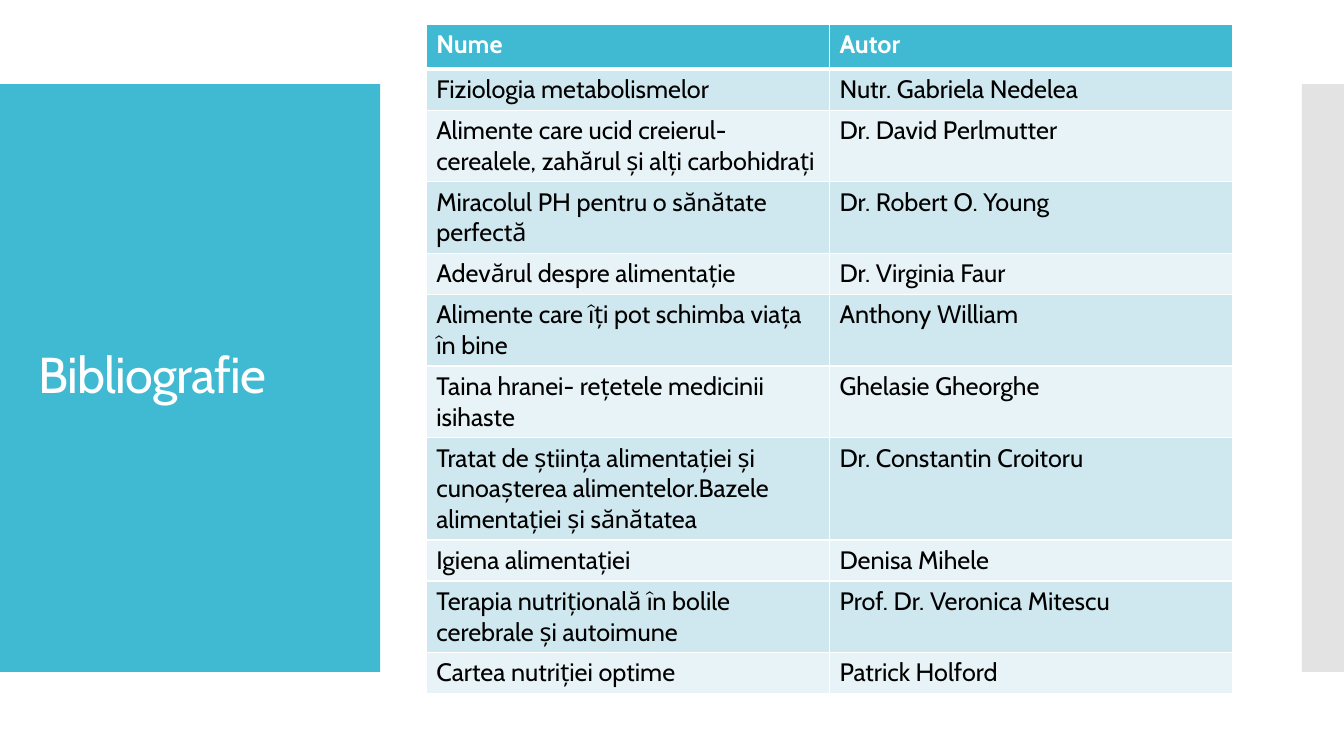
from lxml import etree
from pptx import Presentation
from pptx import util as u
from pptx.dml.color import RGBColor
from pptx.enum import shapes, text
from pptx.oxml import ns

PX = 9525
FONT = "Cabin"
TEAL = RGBColor(0x40, 0xBA, 0xD2)
GRAY = RGBColor(0xC8, 0xC8, 0xC8)
WHITE = RGBColor(0xFF, 0xFF, 0xFF)
BLACK = RGBColor(0x00, 0x00, 0x00)
BANDS = (RGBColor(0xCF, 0xE7, 0xEE), RGBColor(0xE8, 0xF3, 0xF7))

HEADER = ("Nume", "Autor")
BOOKS = [
    ("Fiziologia metabolismelor", "Nutr. Gabriela Nedelea"),
    ("Alimente care ucid creierul-cerealele, zahărul și alți carbohidrați", "Dr. David Perlmutter"),
    ("Miracolul PH pentru o sănătate perfectă", "Dr. Robert O. Young"),
    ("Adevărul despre alimentație", "Dr. Virginia Faur"),
    ("Alimente care îți pot schimba viața în bine", "Anthony William"),
    ("Taina hranei- rețetele medicinii isihaste", "Ghelasie Gheorghe"),
    ("Tratat de știința alimentației și cunoașterea alimentelor.Bazele alimentației și sănătatea",
     "Dr. Constantin Croitoru"),
    ("Igiena alimentației", "Denisa Mihele"),
    ("Terapia nutrițională în bolile cerebrale și autoimune", "Prof. Dr. Veronica Mitescu"),
    ("Cartea nutriției optime", "Patrick Holford"),
]


def px(*lengths):
    return [u.Emu(length * PX) for length in lengths]


def add_run(paragraph, words, size, color, bold=False):
    run = paragraph.add_run()
    run.text = words
    run.font.name = FONT
    run.font.size = u.Pt(size)
    run.font.bold = bold
    run.font.color.rgb = color
    return run


def add_panel(slide, left, top, width, height, color, opacity=100):
    panel = slide.shapes.add_shape(shapes.MSO_SHAPE.RECTANGLE, *px(left, top, width, height))
    panel.shadow.inherit = False
    panel.fill.solid()
    panel.fill.fore_color.rgb = color
    panel.line.fill.background()
    if opacity < 100:
        fill_color = panel.fill._xPr.find(".//" + ns.qn("a:srgbClr"))
        etree.SubElement(fill_color, ns.qn("a:alpha"), val=str(opacity * 1000))


def set_title(slide, words, left, top, width, height):
    title = slide.shapes.title
    title.left, title.top, title.width, title.height = px(left, top, width, height)
    # Bring the title in front of the panels
    title._element.getparent().append(title._element)
    frame = title.text_frame
    frame.word_wrap = True
    frame.auto_size = text.MSO_AUTO_SIZE.NONE
    frame.vertical_anchor = text.MSO_ANCHOR.MIDDLE
    paragraph = frame.paragraphs[0]
    paragraph.alignment = text.PP_ALIGN.LEFT
    paragraph.line_spacing = 0.9
    run = add_run(paragraph, words, 36, WHITE)
    run.font._element.set("spc", "-60")


def set_borders(cell, top, bottom):
    """Draw white borders; top and bottom are widths in points."""
    properties = cell._tc.get_or_add_tcPr()
    for side, width in (("L", 1), ("R", 1), ("T", top), ("B", bottom)):
        line = etree.SubElement(properties, ns.qn("a:ln" + side), w=str(u.Pt(width)))
        fill = etree.SubElement(line, ns.qn("a:solidFill"))
        etree.SubElement(fill, ns.qn("a:srgbClr"), val=str(WHITE))


def add_book_table(slide, left, top, column_width, header_height, row_height):
    rows = [HEADER] + BOOKS
    height = header_height + row_height * len(BOOKS)
    frame = slide.shapes.add_table(
        len(rows), len(HEADER), *px(left, top, column_width * len(HEADER), height))
    table = frame.table
    for column in table.columns:
        column.width = px(column_width)[0]
    for index, values in enumerate(rows):
        is_header = index == 0
        table.rows[index].height = px(header_height if is_header else row_height)[0]
        for cell, words in zip(table.rows[index].cells, values):
            set_borders(cell, top=3 if index == 1 else 1, bottom=3 if is_header else 1)
            cell.fill.solid()
            cell.fill.fore_color.rgb = TEAL if is_header else BANDS[(index - 1) % 2]
            add_run(cell.text_frame.paragraphs[0], words, 18,
                    WHITE if is_header else BLACK, bold=is_header)


def main():
    presentation = Presentation()
    presentation.slide_width, presentation.slide_height = px(1280, 720)
    slide = presentation.slides.add_slide(presentation.slide_layouts.get_by_name("Title Only"))
    add_panel(slide, 0, 80, 362, 560, TEAL)
    add_panel(slide, 1240, 80, 40, 560, GRAY, opacity=50)
    set_title(slide, "Bibliografie", 27, 118, 309, 483)
    add_book_table(slide, 406, 23, column_width=384, header_height=43, row_height=39)
    presentation.save("out.pptx")


if __name__ == "__main__":
    main()
